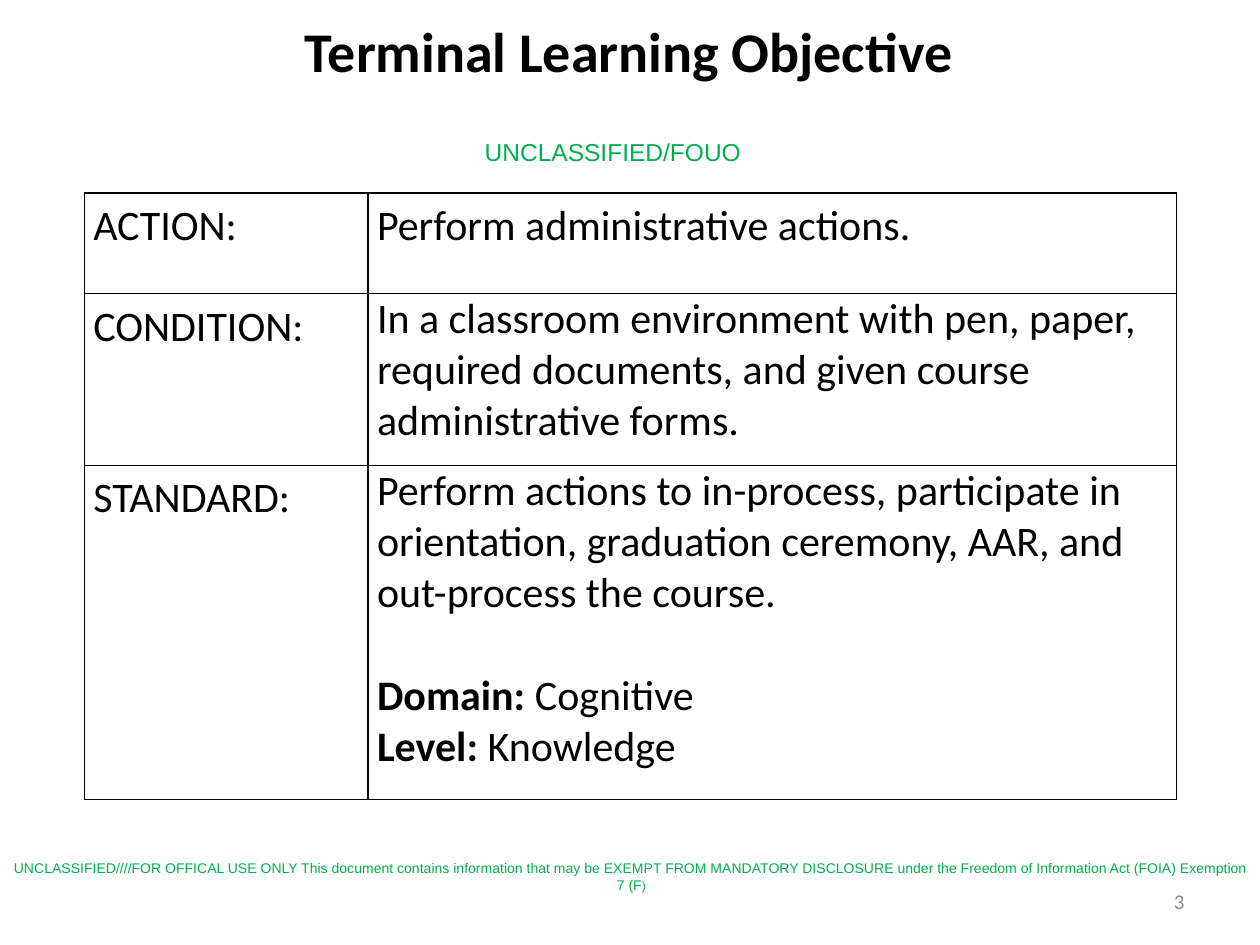
from dataclasses import dataclass

from lxml import etree
from pptx import Presentation
from pptx.dml.color import RGBColor
from pptx.enum import text as t
from pptx.oxml import ns
from pptx.util import Cm, Pt

BLACK = RGBColor(0x00, 0x00, 0x00)
GREEN = RGBColor(0x00, 0xB0, 0x50)
GREY = RGBColor(0x8C, 0x8C, 0x8C)


@dataclass(frozen=True)
class Span:
    text: str
    size: float = 24
    font: str = "Calibri"
    color: RGBColor = BLACK
    bold: bool = False


@dataclass(frozen=True)
class Para:
    spans: tuple[Span, ...]
    line_spacing: float = 1.0
    space_before: float = 0


@dataclass(frozen=True)
class Label:
    left: float
    top: float
    width: float
    height: float
    spans: tuple[Span, ...]
    align: t.PP_ALIGN
    anchor: t.MSO_ANCHOR = t.MSO_ANCHOR.TOP


@dataclass(frozen=True)
class ObjectiveRow:
    height: float
    heading: str
    details: tuple[Para, ...]


LABELS = (
    Label(9.52, 2.64, 5.82, 0.86,
          (Span("UNCLASSIFIED/FOUO", 14, "Arial", GREEN),), t.PP_ALIGN.LEFT),
    Label(0.03, 17.2, 25.4, 0.94,
          (Span("UNCLASSIFIED////FOR OFFICAL USE ONLY This document contains "
                "information that may be EXEMPT FROM MANDATORY DISCLOSURE under "
                "the Freedom of Information Act (FOIA) Exemption 7 (F",
                8, "Arial", GREEN),
           Span(")", 7, "Arial", GREEN)), t.PP_ALIGN.CENTER),
    Label(18.21, 17.65, 5.92, 1.02, (Span("3", 12, color=GREY),),
          t.PP_ALIGN.RIGHT, t.MSO_ANCHOR.MIDDLE),
)

COLUMN_WIDTHS = (5.72, 16.3)
HEADING_SPACING = 1.15
OBJECTIVE_ROWS = (
    ObjectiveRow(2.03, "ACTION:", (
        Para((Span("Perform administrative actions."),), HEADING_SPACING),)),
    ObjectiveRow(3.46, "CONDITION:", (
        Para((Span("In a classroom environment with pen, paper, required "
                   "documents, and given course administrative forms."),)),)),
    ObjectiveRow(6.74, "STANDARD:", (
        Para((Span("Perform actions to in-process, participate in orientation, "
                   "graduation ceremony, AAR, and out-process the course."),)),
        Para((Span("Domain: ", bold=True), Span("Cognitive")), space_before=29.3),
        Para((Span("Level: ", bold=True), Span("Knowledge"))))),
)


def add_spans(paragraph, spans: tuple[Span, ...]) -> None:
    for span in spans:
        run = paragraph.add_run()
        run.text = span.text
        run.font.size = Pt(span.size)
        run.font.name = span.font
        run.font.bold = span.bold
        run.font.color.rgb = span.color


def add_title(slide) -> None:
    title = slide.shapes.title
    title.left, title.top = Cm(2.74), Cm(0.2)
    title.width, title.height = Cm(19.89), Cm(1.63)
    frame = title.text_frame
    frame.auto_size = t.MSO_AUTO_SIZE.NONE
    frame.vertical_anchor = t.MSO_ANCHOR.MIDDLE
    frame.paragraphs[0].alignment = t.PP_ALIGN.CENTER
    add_spans(frame.paragraphs[0],
              (Span("Terminal Learning Objective", 32, bold=True),))


def add_label(slide, label: Label) -> None:
    box = slide.shapes.add_textbox(Cm(label.left), Cm(label.top),
                                   Cm(label.width), Cm(label.height))
    frame = box.text_frame
    frame.word_wrap = True
    frame.vertical_anchor = label.anchor
    frame.paragraphs[0].alignment = label.align
    add_spans(frame.paragraphs[0], label.spans)


def set_borders(cell) -> None:
    """Give the cell a thin black line on all four sides."""
    properties = cell._tc.get_or_add_tcPr()
    for index, side in enumerate(("lnL", "lnR", "lnT", "lnB")):
        line = etree.Element(ns.qn(f"a:{side}"), w=str(Pt(1)))
        fill = etree.SubElement(line, ns.qn("a:solidFill"))
        etree.SubElement(fill, ns.qn("a:srgbClr"), val=str(BLACK))
        properties.insert(index, line)


def fill_cell(cell, paras: tuple[Para, ...]) -> None:
    cell.margin_left = cell.margin_right = Cm(0.18)
    cell.margin_top = cell.margin_bottom = 0
    cell.fill.background()
    set_borders(cell)
    frame = cell.text_frame
    for index, para in enumerate(paras):
        paragraph = frame.add_paragraph() if index else frame.paragraphs[0]
        paragraph.line_spacing = para.line_spacing
        if para.space_before:
            paragraph.space_before = Pt(para.space_before)
        add_spans(paragraph, para.spans)


def add_objective_table(slide) -> None:
    height = sum(row.height for row in OBJECTIVE_ROWS)
    table = slide.shapes.add_table(
        len(OBJECTIVE_ROWS), len(COLUMN_WIDTHS), Cm(1.7), Cm(3.89),
        Cm(sum(COLUMN_WIDTHS)), Cm(height)).table
    table.first_row = table.horz_banding = False
    for column, width in zip(table.columns, COLUMN_WIDTHS):
        column.width = Cm(width)
    for index, row in enumerate(OBJECTIVE_ROWS):
        table.rows[index].height = Cm(row.height)
        heading = Para((Span(row.heading),), HEADING_SPACING)
        fill_cell(table.cell(index, 0), (heading,))
        fill_cell(table.cell(index, 1), row.details)


def main() -> None:
    deck = Presentation()
    deck.slide_width, deck.slide_height = Cm(25.4), Cm(19.05)
    slide = deck.slides.add_slide(deck.slide_layouts.get_by_name("Title Only"))
    add_title(slide)
    add_objective_table(slide)
    for label in LABELS:
        add_label(slide, label)
    deck.save("out.pptx")


if __name__ == "__main__":
    main()
